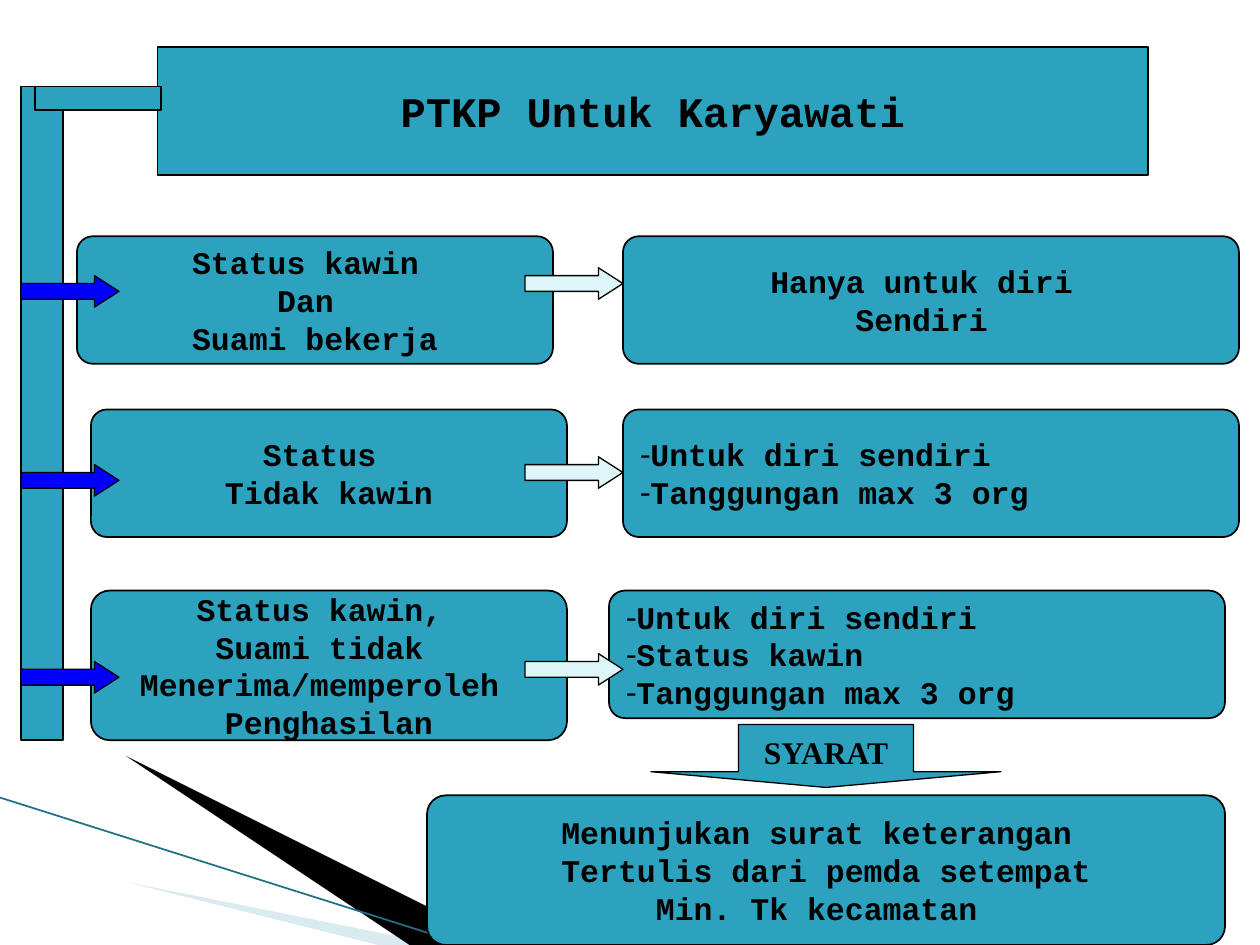
from dataclasses import dataclass

from lxml.etree import SubElement
from pptx import Presentation
from pptx.dml.color import RGBColor
from pptx.enum.shapes import MSO_CONNECTOR, MSO_SHAPE as Preset
from pptx.enum.text import MSO_ANCHOR, MSO_AUTO_SIZE, PP_ALIGN
from pptx.oxml.ns import qn
from pptx.util import Inches, Pt

COLUMNS, ROWS = 180, 120
COLUMN, ROW = Inches(10) / COLUMNS, Inches(7.5) / ROWS


@dataclass(frozen=True)
class Theme:
    panel: str = "2DA2BF"
    ink: str = "000000"
    entry_arrow: str = "0000FF"
    result_arrow: str = "DEF5FA"
    wedge: str = "A0CBDC"
    edge: str = "1F7286"
    mono: str = "Courier New"
    serif: str = "Times New Roman"
    title_size: int = 24
    body_size: int = 18
    panel_line: float = 1
    thin_line: float = 0.75


THEME = Theme()


def grid(column, row, width, height):
    return [round(v) for v in (column * COLUMN, row * ROW, width * COLUMN, height * ROW)]


def paint(shape, fill=THEME.panel, line=THEME.ink, width=THEME.thin_line):
    shape.fill.solid()
    shape.fill.fore_color.rgb = RGBColor.from_string(fill)
    if line:
        shape.line.color.rgb = RGBColor.from_string(line)
        shape.line.width = Pt(width)
    else:
        shape.line.fill.background()


def add_block(slide, preset, box, adjustments=(), **look):
    block = slide.shapes.add_shape(preset, *grid(*box))
    block.shadow.inherit = False
    for index, value in enumerate(adjustments):
        block.adjustments[index] = value
    paint(block, **look)
    return block


def add_dash(paragraph):
    properties = paragraph._p.get_or_add_pPr()
    properties.set("marL", "0")
    properties.set("indent", "0")
    SubElement(properties, qn("a:buFont")).set("typeface", THEME.serif)
    SubElement(properties, qn("a:buChar")).set("char", "-")


def write(shape, lines, size=THEME.body_size, font=THEME.mono, dashed=False):
    frame = shape.text_frame
    frame.auto_size = MSO_AUTO_SIZE.NONE
    frame.word_wrap = dashed
    frame.vertical_anchor = MSO_ANCHOR.MIDDLE
    for index, line in enumerate(lines):
        paragraph = frame.add_paragraph() if index else frame.paragraphs[0]
        paragraph.alignment = PP_ALIGN.LEFT if dashed else PP_ALIGN.CENTER
        if dashed:
            add_dash(paragraph)
        run = paragraph.add_run()
        run.text = line
        run.font.name, run.font.size, run.font.bold = font, Pt(size), True
        run.font.color.rgb = RGBColor.from_string(THEME.ink)


def add_panel(slide, box, lines, dashed=False):
    panel = add_block(slide, Preset.ROUNDED_RECTANGLE, box, [0.125], width=THEME.panel_line)
    write(panel, lines, dashed=dashed)


def add_title(slide, box, text):
    title = slide.shapes.title
    title.left, title.top, title.width, title.height = grid(*box)
    outline = SubElement(title._element.spPr, qn("a:prstGeom"), prst="roundRect")
    guides = SubElement(outline, qn("a:avLst"))
    SubElement(guides, qn("a:gd"), name="adj", fmla="val 12500")
    paint(title, width=THEME.panel_line)
    write(title, [text], size=THEME.title_size)


def add_wedge(slide, points, fill, alpha=None):
    """Draw a borderless polygon from points in inches."""
    builder = slide.shapes.build_freeform(*points[0], scale=Inches(1))
    builder.add_line_segments(points[1:], close=True)
    wedge = builder.convert_to_shape()
    wedge.shadow.inherit = False
    paint(wedge, fill=fill, line=None)
    if alpha:
        color = wedge._element.spPr.find(qn("a:solidFill"))[0]
        SubElement(color, qn("a:alpha")).set("val", str(alpha * 1000))


def add_corner(slide):
    """Draw the folded corner at the lower left."""
    add_wedge(slide, [(0.55, 6.51), (5.95, 7.5), (4.56, 7.5)], THEME.wedge, alpha=40)
    add_wedge(slide, [(0.53, 6.49), (4.57, 7.5), (3.72, 7.5)], THEME.ink)
    edge = slide.shapes.add_connector(
        MSO_CONNECTOR.STRAIGHT, 0, Inches(6.33), Inches(3.7), Inches(7.5))
    edge.line.color.rgb = RGBColor.from_string(THEME.edge)
    edge.line.width = Pt(1)
    SubElement(edge._element.spPr, qn("a:effectLst"))


def add_case(slide, status_box, status, result_box, result, dashed):
    add_panel(slide, status_box, status)
    add_panel(slide, result_box, result, dashed)


def add_arrows(slide, row):
    """Draw the arrow into a case and the one on to its result."""
    for column, top, fill in ((3, row, THEME.entry_arrow), (75, row - 1, THEME.result_arrow)):
        add_block(slide, Preset.RIGHT_ARROW, (column, top, 14, 4), [0.5, 0.778], fill=fill)


def add_requirement(slide, arrow_box, label, panel_box, lines):
    add_panel(slide, panel_box, lines)
    arrow = add_block(slide, Preset.DOWN_ARROW, arrow_box, [0.5, 0.25])
    write(arrow, [label], font=THEME.serif)


CASES = [
    ((11, 30, 68, 16.2), ["Status kawin ", "Dan ", "Suami bekerja"],
     (89, 30, 88, 16.2), ["Hanya untuk diri ", "Sendiri "], False),
    ((13, 52, 68, 16.2), ["Status ", "Tidak kawin"],
     (89, 52, 88, 16.2), ["Untuk diri sendiri", "Tanggungan max 3 org"], True),
    ((13, 75, 68, 19),
     ["Status kawin, ", "Suami tidak ", "Menerima/memperoleh ", "Penghasilan"],
     (87, 75, 88, 16.2),
     ["Untuk diri sendiri", "Status kawin", "Tanggungan max 3 org"], True),
]


def main():
    deck = Presentation()
    deck.slide_width, deck.slide_height = Inches(10), Inches(7.5)
    slide = deck.slides.add_slide(deck.slide_layouts[5])
    add_corner(slide)
    add_title(slide, (22.5, 6, 141.5, 16.2), "PTKP Untuk Karyawati")
    for case in CASES:
        add_case(slide, *case)
    add_requirement(
        slide, (93, 92, 50, 8), "SYARAT", (61, 101, 114, 19),
        ["Menunjukan surat keterangan ", "Tertulis dari pemda setempat", "Min. Tk kecamatan "])
    add_block(slide, Preset.RECTANGLE, (3, 11, 6, 83))
    for row in (35, 59, 84):
        add_arrows(slide, row)
    add_block(slide, Preset.RECTANGLE, (5, 11, 18, 3))
    deck.save("out.pptx")


if __name__ == "__main__":
    main()
